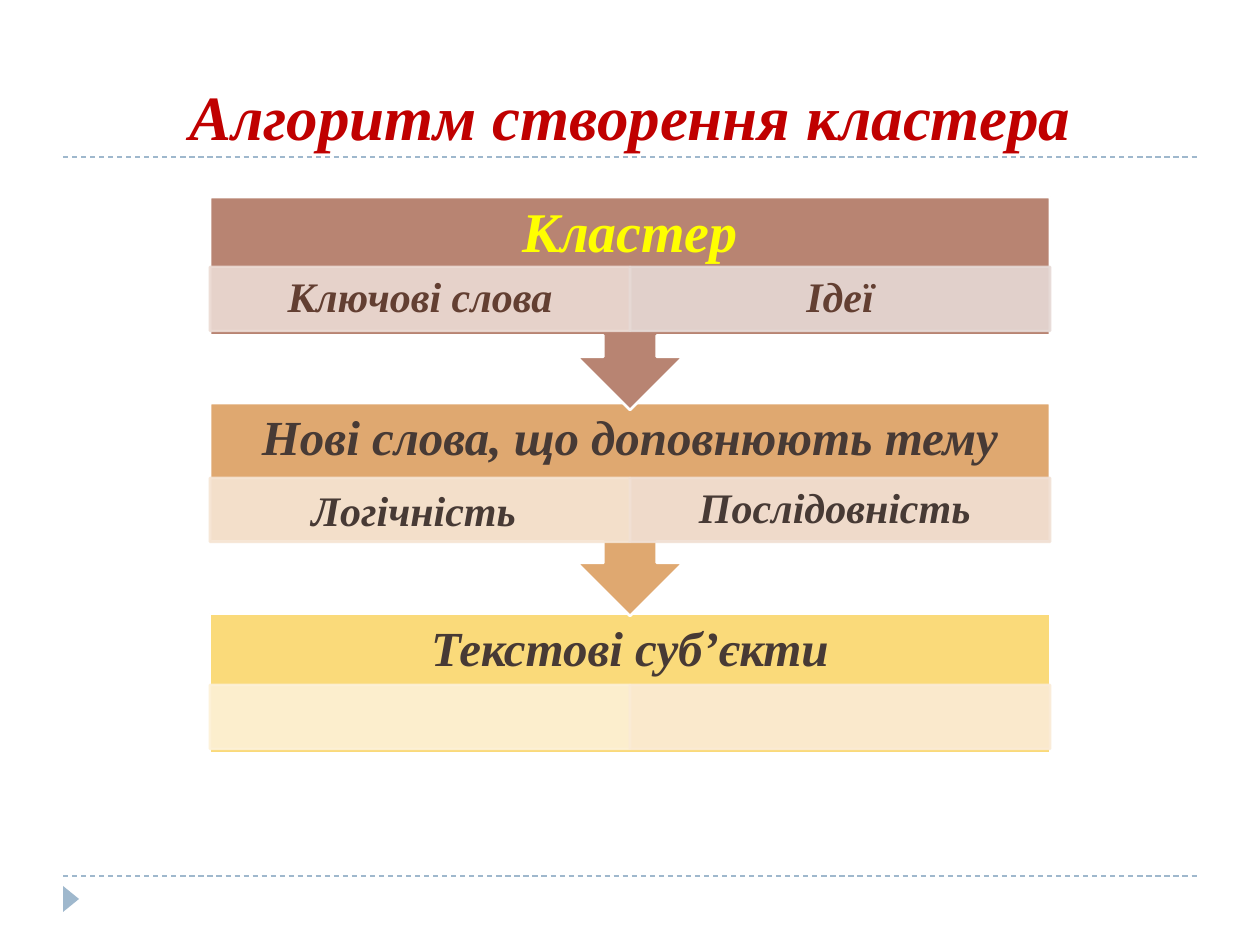
from dataclasses import dataclass

from lxml import etree
from pptx import Presentation
from pptx import util as u
from pptx.dml.color import RGBColor
from pptx.enum import dml, shapes, text
from pptx.oxml.ns import qn

EMU_PER_PX = 914400 / 126


@dataclass(frozen=True)
class Theme:
    font: str = "Times New Roman"
    title: str = "C00000"
    rule: str = "9FB8CD"
    outline: str = "FFFFFF"
    dark: str = "473A35"
    brown: str = "633F32"
    yellow: str = "FFFF00"
    title_size: int = 36
    lead_size: int = 32
    header_size: int = 28
    cell_size: int = 24


@dataclass(frozen=True)
class Cell:
    fill: str
    label: str = ""
    tail_size: int = 0  # size of a closing space, if there is one


@dataclass(frozen=True)
class Stage:
    top: int
    cells_top: int
    fill: str
    header: str
    cells: tuple[Cell, Cell]
    header_color: str
    cell_color: str
    header_size: int
    arrow: bool = True


THEME = Theme()
LEFT, WIDTH = 210, 840
HEADER_HEIGHT, CELL_HEIGHT = 74, 64
CALLOUT_HEIGHT, BOX_HEIGHT = 213, 139

# Back to front: each arrow overlaps the stage below it
STAGES = (
    Stage(614, 685, "FADA7A", "Текстові суб’єкти",
          (Cell("FDF1D7"), Cell("FAEBD5")),
          THEME.dark, THEME.dark, THEME.header_size, arrow=False),
    Stage(403, 478, "DFA870", "Нові слова, що доповнюють тему",
          (Cell("F6E5D4", "Логічність", 29), Cell("F1E0D4", "Послідовність ")),
          THEME.dark, THEME.dark, THEME.header_size),
    Stage(197, 267, "B88472", "Кластер",
          (Cell("ECDBD4", "Ключові слова"), Cell("E6D9D5", "Ідеї")),
          THEME.yellow, THEME.brown, THEME.lead_size),
)


def px(*lengths: int) -> list[int]:
    return [round(length * EMU_PER_PX) for length in lengths]


def write_text(shape, content: str, *, size: int, color: str,
               anchor=text.MSO_ANCHOR.MIDDLE, line_spacing: float = 0.9,
               inset: int = 0, tail_size: int = 0) -> None:
    frame = shape.text_frame
    frame.word_wrap = True
    frame.vertical_anchor = anchor
    frame.margin_left, frame.margin_right = px(inset, inset)
    frame.margin_top = frame.margin_bottom = u.Inches(0.03)
    paragraph = frame.paragraphs[0]
    paragraph.alignment = text.PP_ALIGN.CENTER
    paragraph.line_spacing = line_spacing
    pieces = [(content, size)] + ([(" ", tail_size)] if tail_size else [])
    for piece, points in pieces:
        run = paragraph.add_run()
        run.text = piece
        run.font.name = THEME.font
        run.font.size = u.Pt(points)
        run.font.bold = run.font.italic = True
        run.font.color.rgb = RGBColor.from_string(color)


def add_block(slide, kind, box: tuple[int, int, int, int], fill: str, *,
              outline: str | None = None, opacity: int = 100, rotation: int = 0):
    shape = slide.shapes.add_shape(kind, *px(*box))
    shape.shadow.inherit = False
    shape.rotation = rotation
    shape.fill.solid()
    shape.fill.fore_color.rgb = RGBColor.from_string(fill)
    if outline:
        shape.line.color.rgb = RGBColor.from_string(outline)
        shape.line.width = u.Pt(1.5)
    else:
        shape.line.fill.background()
    if opacity < 100:
        for color in shape._element.spPr.iter(qn("a:srgbClr")):
            etree.SubElement(color, qn("a:alpha")).set("val", str(opacity * 1000))
    return shape


def add_rule(slide, y: int) -> None:
    line = slide.shapes.add_connector(shapes.MSO_CONNECTOR.STRAIGHT, *px(63, y, 1197, y))
    line.line.color.rgb = RGBColor.from_string(THEME.rule)
    line.line.width = u.Pt(0.75)
    line.line.dash_style = dml.MSO_LINE.DASH
    etree.SubElement(line._element.spPr, qn("a:effectLst"))


def add_stage(slide, stage: Stage) -> None:
    rectangle = shapes.MSO_SHAPE.RECTANGLE
    kind = shapes.MSO_SHAPE.UP_ARROW_CALLOUT if stage.arrow else rectangle
    height = CALLOUT_HEIGHT if stage.arrow else BOX_HEIGHT
    add_block(slide, kind, (LEFT, stage.top, WIDTH, height), stage.fill,
              outline=THEME.outline, rotation=180 if stage.arrow else 0)
    header = slide.shapes.add_textbox(*px(LEFT, stage.top, WIDTH, HEADER_HEIGHT))
    write_text(header, stage.header, size=stage.header_size,
               color=stage.header_color, inset=28)
    cell_width = WIDTH // len(stage.cells)
    for column, cell in enumerate(stage.cells):
        box = (LEFT + column * cell_width, stage.cells_top, cell_width, CELL_HEIGHT)
        shape = add_block(slide, rectangle, box, cell.fill, outline=cell.fill, opacity=90)
        if cell.label:
            write_text(shape, cell.label, size=THEME.cell_size, color=stage.cell_color,
                       inset=24, tail_size=cell.tail_size)


def main() -> None:
    presentation = Presentation()
    presentation.slide_width, presentation.slide_height = px(1260, 945)
    slide = presentation.slides.add_slide(presentation.slide_layouts[5])

    # Rules and corner marker
    for y in (876, 157):
        add_rule(slide, y)
    add_block(slide, shapes.MSO_SHAPE.ISOSCELES_TRIANGLE, (58, 891, 26, 16),
              THEME.rule, rotation=90)

    # Title
    title = slide.shapes.title
    title.left, title.top, title.width, title.height = px(63, 21, 1134, 136)
    write_text(title, "Алгоритм створення кластера", size=THEME.title_size,
               color=THEME.title, anchor=text.MSO_ANCHOR.BOTTOM,
               line_spacing=1.0, inset=13)

    # Stages of the algorithm
    for stage in STAGES:
        add_stage(slide, stage)

    presentation.save("out.pptx")


if __name__ == "__main__":
    main()
